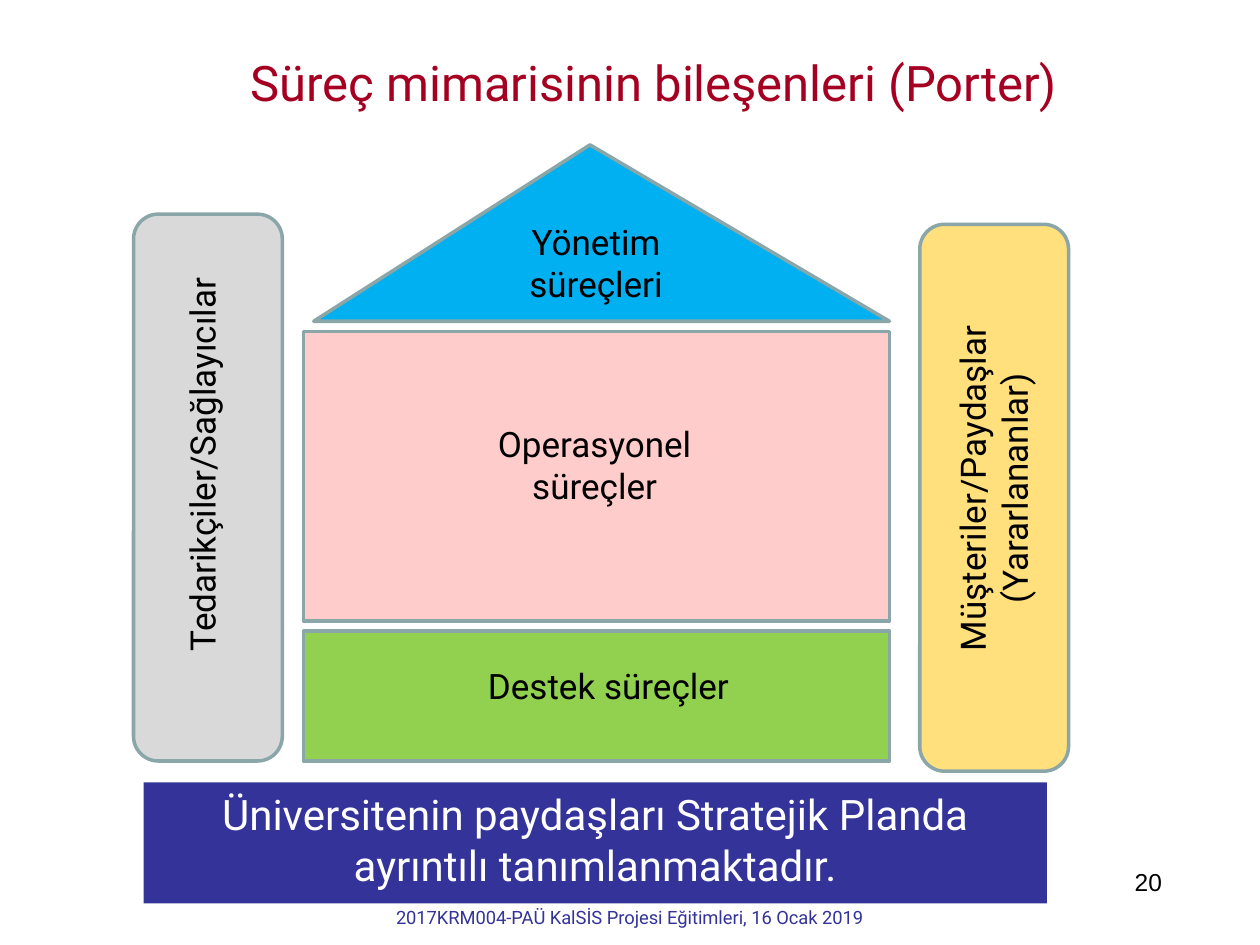
from pptx import Presentation
from pptx.dml.color import RGBColor
from pptx.enum.shapes import MSO_SHAPE
from pptx.enum.text import MSO_ANCHOR, PP_ALIGN
from pptx.util import Pt

RECT = MSO_SHAPE.RECTANGLE
ROUNDED = MSO_SHAPE.ROUNDED_RECTANGLE
TRIANGLE = MSO_SHAPE.ISOSCELES_TRIANGLE
TOP, MIDDLE = MSO_ANCHOR.TOP, MSO_ANCHOR.MIDDLE
LEFT, CENTER, RIGHT = PP_ALIGN.LEFT, PP_ALIGN.CENTER, PP_ALIGN.RIGHT

BLACK = RGBColor(0x00, 0x00, 0x00)
WHITE = RGBColor(0xFF, 0xFF, 0xFF)
CRIMSON = RGBColor(0xA5, 0x00, 0x21)
NAVY = RGBColor(0x33, 0x33, 0x99)
OUTLINE = RGBColor(0x8A, 0xA6, 0xA8)
GREY = RGBColor(0xD9, 0xD9, 0xD9)
YELLOW = RGBColor(0xFF, 0xE0, 0x7D)
GREEN = RGBColor(0x92, 0xD0, 0x50)
PINK = RGBColor(0xFF, 0xCC, 0xCC)
BLUE = RGBColor(0x00, 0xB0, 0xF0)

LABEL_HEIGHT = 39.6
HOUSE_LEFT, HOUSE_WIDTH = 173.5, 334.8
SIDE_WIDTH, SIDE_HEIGHT = 85, 312.5


def write(s, text, size, color, align=CENTER, anchor=MIDDLE, font="Roboto"):
    tf = s.text_frame
    tf.word_wrap = True
    tf.vertical_anchor = anchor
    p = tf.paragraphs[0]
    p.alignment = align
    r = p.add_run()
    r.text = text
    r.font.size = Pt(size)
    r.font.name = font
    r.font.color.rgb = color


def place(s, left, top, width, height):
    s.left, s.top, s.width, s.height = Pt(left), Pt(top), Pt(width), Pt(height)


def add_block(slide, kind, box, fill, outline=OUTLINE):
    s = slide.shapes.add_shape(kind, *map(Pt, box))
    s.shadow.inherit = False
    s.fill.solid()
    s.fill.fore_color.rgb = fill
    if outline is None:
        s.line.fill.background()
    else:
        s.line.color.rgb = outline
        s.line.width = Pt(2)
    return s


def add_text(slide, box, text, size, color, **style):
    s = slide.shapes.add_textbox(*map(Pt, box))
    write(s, text, size, color, **style)
    return s


def add_label(slide, left, top, width, text, rotation=0):
    s = add_text(slide, (left, top, width, LABEL_HEIGHT), text, 20, BLACK)
    s.rotation = rotation


def add_title(slide, text):
    s = slide.shapes.title
    place(s, 136, 11, 476, 72)
    write(s, text, 28, CRIMSON, align=LEFT)


def add_sides(slide):
    for left, top, fill in ((76.3, 122.4, GREY), (525.6, 128.2, YELLOW)):
        add_block(slide, ROUNDED, (left, top, SIDE_WIDTH, SIDE_HEIGHT), fill)
    add_label(slide, -3.6, 245.5, 237.6, "Tedarikçiler/Sağlayıcılar", 270)
    add_label(slide, 425.5, 259.2, 283.7,
              "Müşteriler/Paydaşlar (Yararlananlar)", 270)


def add_house(slide):
    for top, height, fill in ((360.7, 74.2, GREEN), (189.4, 165.6, PINK)):
        add_block(slide, RECT, (HOUSE_LEFT, top, HOUSE_WIDTH, height), fill)
    roof = add_block(slide, TRIANGLE, (179.3, 82.8, 329, 100.8), BLUE)
    roof.adjustments[0] = 0.48
    add_label(slide, 286.6, 130.3, 108, "Yönetim süreçleri")
    add_label(slide, 254.9, 245.5, 169.9, "Operasyonel süreçler")
    add_label(slide, 262.8, 372.2, 169.9, "Destek süreçler")


def add_banner(slide, text):
    s = add_block(slide, RECT, (82.1, 447.1, 516.2, 69.1), NAVY, outline=None)
    write(s, text, 24, WHITE, anchor=TOP)
    s.text_frame.paragraphs[0].space_after = Pt(6)


def main():
    prs = Presentation()
    prs.slide_width, prs.slide_height = Pt(720), Pt(540)
    slide = prs.slides.add_slide(prs.slide_layouts[5])
    add_title(slide, "Süreç mimarisinin bileşenleri (Porter)")
    add_sides(slide)
    add_house(slide)
    add_text(slide, (206.6, 514.1, 306.7, 22.3),
             "2017KRM004-PAÜ KalSİS Projesi Eğitimleri, 16 Ocak 2019",
             10.5, NAVY, anchor=TOP)
    add_text(slide, (503.3, 491.8, 167.8, 37.4), "20", 14, BLACK,
             align=RIGHT, anchor=TOP, font="Arial")
    add_banner(slide, "Üniversitenin paydaşları Stratejik Planda "
                      "ayrıntılı tanımlanmaktadır.")
    prs.save("out.pptx")


if __name__ == "__main__":
    main()
